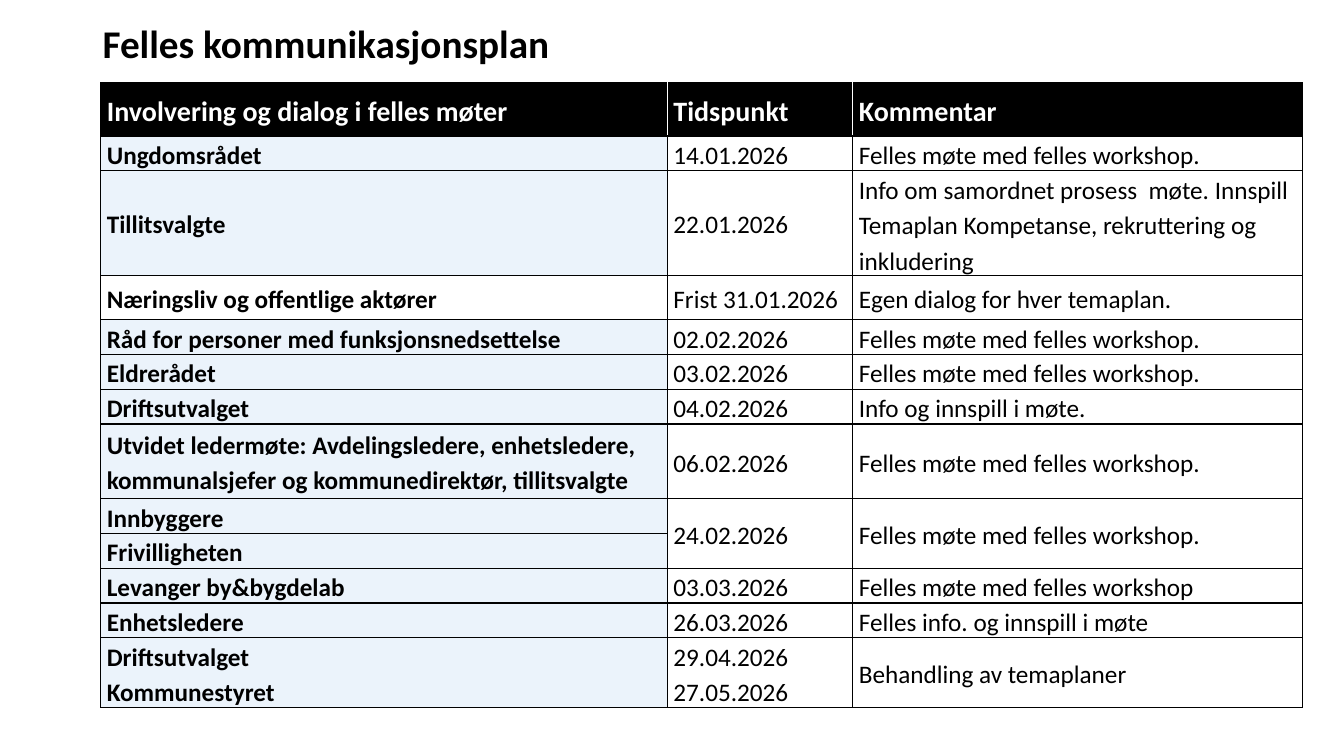
from pptx import Presentation
from pptx.dml.color import RGBColor
from pptx.enum.text import MSO_ANCHOR as Anchor
from pptx.oxml.ns import qn
from pptx.util import Inches, Pt
from lxml.etree import SubElement as Sub

BLACK = RGBColor(0, 0, 0)
WHITE = RGBColor(255, 255, 255)
PALE = RGBColor(0xEB, 0xF3, 0xFB)

deck = Presentation()
deck.slide_width, deck.slide_height = Inches(13.33), Inches(7.5)
wide, high = deck.slide_width / 100, deck.slide_height / 100
slide = deck.slides.add_slide(deck.slide_layouts[6])


def write(frame, text, lead, size, color, bold):
    frame.word_wrap = True
    frame.text = text
    look = {"name": "Calibri", "size": Pt(size), "bold": bold}
    for para in frame.paragraphs:
        para.line_spacing = lead
        for key, value in look.items():
            setattr(para.font, key, value)
        para.font.color.rgb = color


def edge(cell, side, color):
    line = Sub(cell._tc.get_or_add_tcPr(), qn("a:ln" + side), w=str(Pt(1)))
    fill = Sub(line, qn("a:solidFill"))
    Sub(fill, qn("a:srgbClr"), val=str(color))


title = slide.shapes.add_textbox(
    int(6.9 * wide), int(1.2 * high), int(86.27 * wide), int(9.73 * high))
title.text_frame.vertical_anchor = Anchor.MIDDLE
write(title.text_frame, "Felles kommunikasjonsplan", 0.9, 28, BLACK, True)

joint = "Felles møte med felles workshop."
plan = [
    (7.07, "Involvering og dialog i felles møter", "Tidspunkt", "Kommentar"),
    (3.87, "Ungdomsrådet", "14.01.2026", joint),
    (3.87, "Tillitsvalgte", "22.01.2026",
     "Info om samordnet prosess  møte. Innspill Temaplan Kompetanse, "
     "rekruttering og inkludering"),
    (5.87, "Næringsliv og offentlige aktører", "Frist 31.01.2026",
     "Egen dialog for hver temaplan."),
    (4.13, "Råd for personer med funksjonsnedsettelse", "02.02.2026", joint),
    (3.87, "Eldrerådet", "03.02.2026", joint),
    (3.87, "Driftsutvalget", "04.02.2026", "Info og innspill i møte."),
    (9.87, "Utvidet ledermøte: Avdelingsledere, enhetsledere, "
     "kommunalsjefer og kommunedirektør, tillitsvalgte", "06.02.2026", joint),
    (1.87, "Innbyggere", "24.02.2026", joint),
    (2, "Frivilligheten", "", ""),
    (3.87, "Levanger by&bygdelab", "03.03.2026",
     "Felles møte med felles workshop"),
    (3.87, "Enhetsledere", "26.03.2026", "Felles info. og innspill i møte"),
    (9.07, "Driftsutvalget\nKommunestyret", "29.04.2026\n27.05.2026",
     "Behandling av temaplaner"),
]
cols = [42.16, 13.8, 33.46]
tall = sum(row[0] for row in plan)
table = slide.shapes.add_table(
    len(plan), len(cols), int(7.5 * wide), int(10.93 * high),
    int(sum(cols) * wide), int(tall * high)).table
table.first_row = table.horz_banding = False
for col, share in zip(table.columns, cols):
    col.width = int(share * wide)

inset = {"margin_left": Inches(0.06), "margin_right": Inches(0.06),
         "margin_top": 0, "margin_bottom": 0,
         "vertical_anchor": Anchor.MIDDLE}
for r, (share, *texts) in enumerate(plan):
    table.rows[r].height = int(share * high)
    head = r == 0
    for c, text in enumerate(texts):
        cell = table.cell(r, c)
        for key, value in inset.items():
            setattr(cell, key, value)
        for side in "LRTB":
            inner = side == "L" and c > 0 or side == "R" and c < 2
            edge(cell, side, WHITE if head and inner else BLACK)
        if head or c != 1 and r != 3:
            cell.fill.solid()
            cell.fill.fore_color.rgb = BLACK if head else (PALE, WHITE, WHITE)[c]
        else:
            cell.fill.background()
        write(cell.text_frame, text, 1.15, 20 if head else 18,
              WHITE if head else BLACK, head or c == 0)

for c in (1, 2):
    table.cell(8, c).merge(table.cell(9, c))

deck.save("out.pptx")
